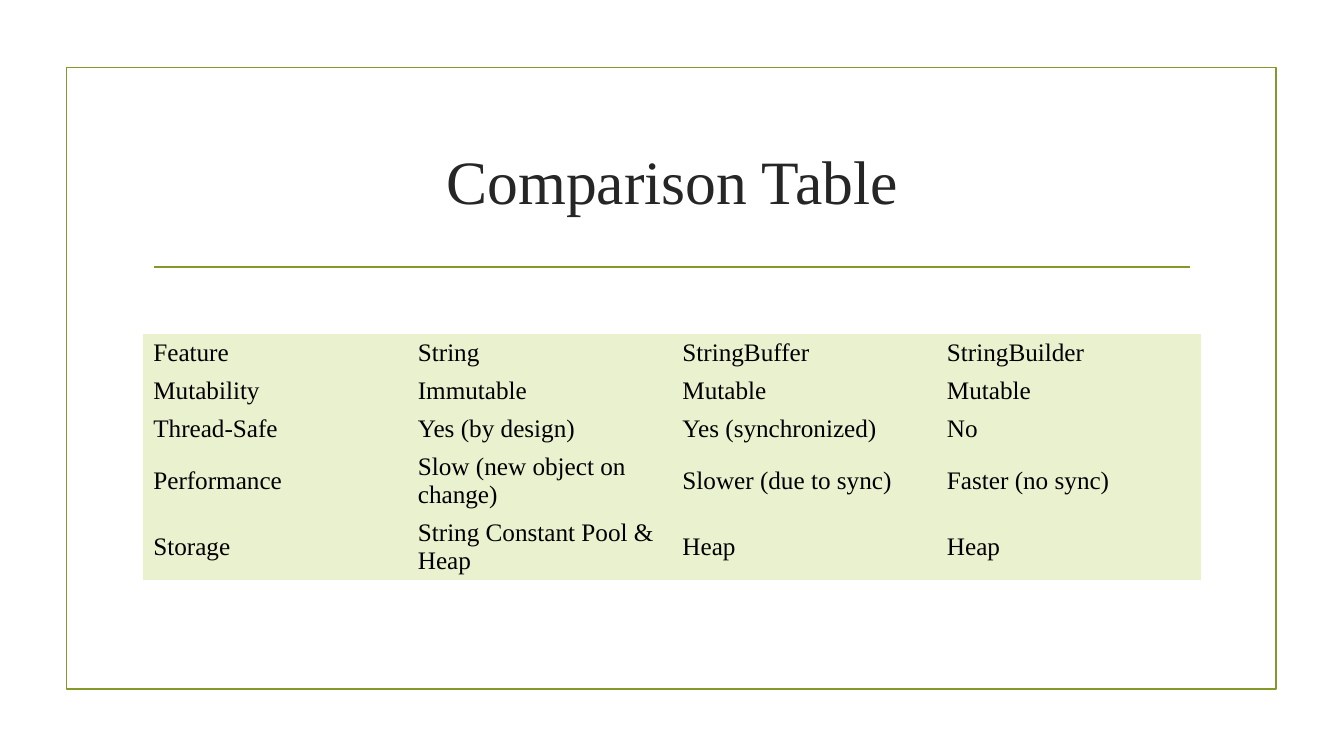
from lxml import etree
from pptx import Presentation
from pptx.dml.color import RGBColor
from pptx.enum.shapes import MSO_CONNECTOR, MSO_SHAPE
from pptx.enum.text import MSO_ANCHOR, MSO_AUTO_SIZE, PP_ALIGN
from pptx.oxml.ns import qn
from pptx.util import Cm, Pt

RECTANGLE = MSO_SHAPE.RECTANGLE
STRAIGHT = MSO_CONNECTOR.STRAIGHT
MIDDLE = MSO_ANCHOR.MIDDLE
CENTER = PP_ALIGN.CENTER
NO_AUTOFIT = MSO_AUTO_SIZE.NONE

FONT = "Times New Roman"
OLIVE = "83992A"
PALE_GREEN = "EAF1CE"
CHARCOAL = "262626"
BLACK = "000000"

TITLE_ONLY = 5
SINGLE_LINE, DOUBLE_LINE = 0.96, 1.66  # row heights in cm
COMPARISON = [
    (SINGLE_LINE, ["Feature", "String", "StringBuffer", "StringBuilder"]),
    (SINGLE_LINE, ["Mutability", "Immutable", "Mutable", "Mutable"]),
    (SINGLE_LINE, ["Thread-Safe", "Yes (by design)", "Yes (synchronized)", "No"]),
    (DOUBLE_LINE, ["Performance", "Slow (new object on change)",
                   "Slower (due to sync)", "Faster (no sync)"]),
    (DOUBLE_LINE, ["Storage", "String Constant Pool & Heap", "Heap", "Heap"]),
]


def color(hex_string):
    return RGBColor.from_string(hex_string)


def add_run(paragraph, text, size, hex_string):
    run = paragraph.add_run()
    run.text = text
    run.font.name = FONT
    run.font.size = Pt(size)
    run.font.bold = False
    run.font.color.rgb = color(hex_string)


def style_line(line):
    line.color.rgb = color(OLIVE)
    line.width = Pt(1.25)


def add_frame(slide, left, top, width, height):
    frame = slide.shapes.add_shape(
        RECTANGLE, Cm(left), Cm(top), Cm(width), Cm(height))
    frame.shadow.inherit = False
    frame.fill.background()
    style_line(frame.line)


def add_heading(slide, left, top, width, height):
    # Title
    title = slide.shapes.title
    title.left, title.top = Cm(left), Cm(top)
    title.width, title.height = Cm(width), Cm(height)
    text_frame = title.text_frame
    text_frame.word_wrap = True
    text_frame.auto_size = NO_AUTOFIT
    text_frame.vertical_anchor = MIDDLE
    paragraph = text_frame.paragraphs[0]
    paragraph.alignment = CENTER
    add_run(paragraph, "Comparison Table", 44, CHARCOAL)

    # Rule below the title
    inset, gap = 0.28, 0.38
    rule_y = Cm(top + height + gap)
    rule = slide.shapes.add_connector(
        STRAIGHT, Cm(left + inset), rule_y, Cm(left + width - inset), rule_y)
    style_line(rule.line)
    etree.SubElement(rule._element.spPr, qn("a:effectLst"))


def clear_borders(cell):
    properties = cell._tc.get_or_add_tcPr()
    for side in ("a:lnL", "a:lnR", "a:lnT", "a:lnB"):
        border = etree.SubElement(properties, qn(side), w="0")
        etree.SubElement(border, qn("a:noFill"))


def add_comparison(slide, left, top, width):
    column_count = len(COMPARISON[0][1])
    height = sum(row_height for row_height, _ in COMPARISON)
    table = slide.shapes.add_table(
        len(COMPARISON), column_count,
        Cm(left), Cm(top), Cm(width), Cm(height)).table
    table.first_row = False
    table.horz_banding = False
    for column in table.columns:
        column.width = Cm(width / column_count)

    for row, (row_height, entries) in zip(table.rows, COMPARISON):
        row.height = Cm(row_height)
        for cell, entry in zip(row.cells, entries):
            clear_borders(cell)
            cell.fill.solid()
            cell.fill.fore_color.rgb = color(PALE_GREEN)
            cell.vertical_anchor = MIDDLE
            add_run(cell.text_frame.paragraphs[0], entry, 18, BLACK)


def main():
    presentation = Presentation()
    presentation.slide_width = Cm(33.87)
    presentation.slide_height = Cm(19.05)
    slide = presentation.slides.add_slide(
        presentation.slide_layouts[TITLE_ONLY])
    add_frame(slide, 1.68, 1.7, 30.48, 15.67)
    add_heading(slide, 3.61, 2.72, 26.67, 3.63)
    add_comparison(slide, 3.61, 8.41, 26.67)
    presentation.save("out.pptx")


if __name__ == "__main__":
    main()
